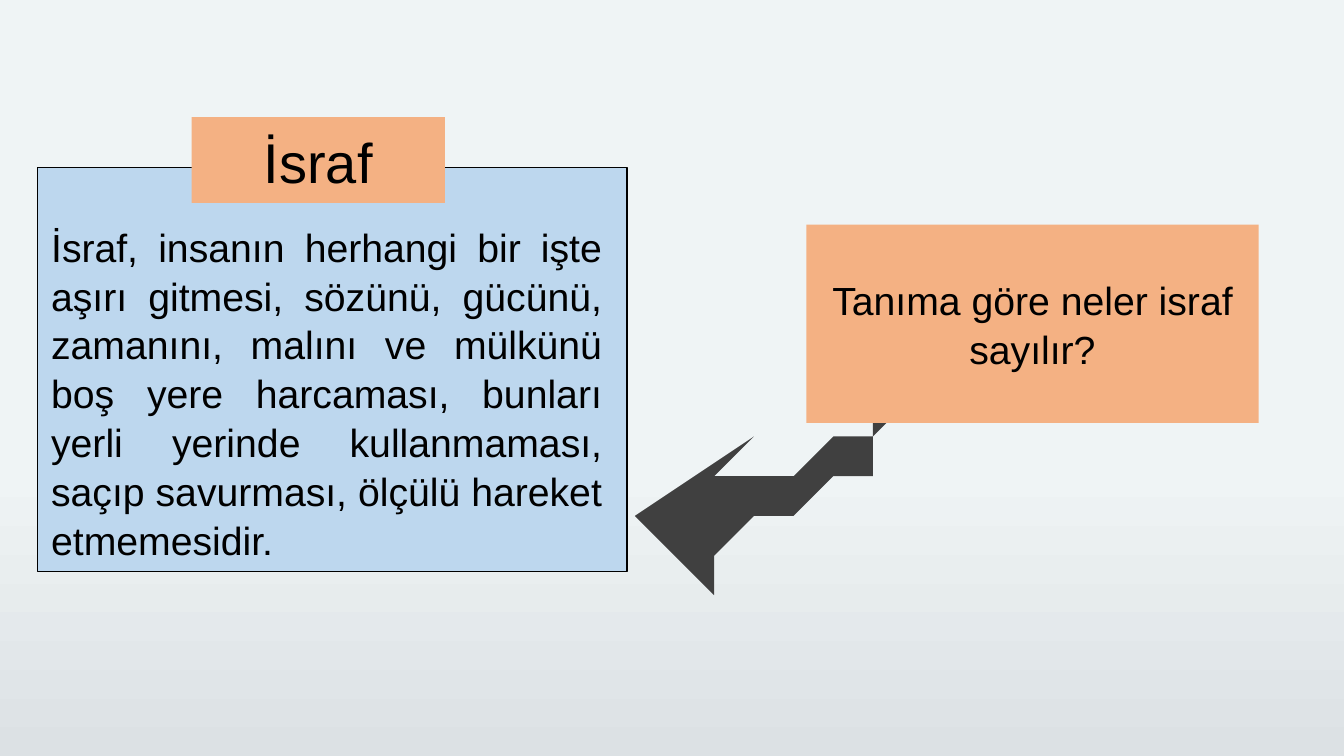
"""Build the slide that defines İsraf and asks a question about it."""
from pptx import Presentation
from pptx.dml.color import RGBColor as RGB
from pptx.enum.shapes import MSO_SHAPE as Shape
from pptx.enum.text import MSO_ANCHOR as Anchor, MSO_AUTO_SIZE as Auto, PP_ALIGN as Align
from pptx.util import Cm, Pt

BLACK = RGB(0, 0, 0)
PEACH = RGB(0xF4, 0xB1, 0x83)
BLUE = RGB(0xBD, 0xD7, 0xEE)
DARK = RGB(0x40, 0x40, 0x40)
PALE = RGB(0xEF, 0xF4, 0xF5)
GREY = RGB(0xDC, 0xE1, 0xE4)

TITLE = "İsraf"
ASK = "Tanıma göre neler israf sayılır?"
BODY = (
    "İsraf, insanın herhangi bir işte aşırı gitmesi, sözünü, gücünü, "
    "zamanını, malını ve mülkünü boş yere harcaması, bunları yerli yerinde "
    "kullanmaması, saçıp savurması, ölçülü hareket etmemesidir."
)


def paint(slide):
    """Give the slide a gradient that darkens towards the bottom."""
    fill = slide.background.fill
    fill.gradient()
    fill.gradient_angle = 270
    for stop, color, place in zip(fill.gradient_stops, (PALE, GREY), (0.62, 1)):
        stop.color.rgb = color
        stop.position = place


def write(shape, text, size, align, anchor=Anchor.MIDDLE, inset=(0, 0)):
    """Set the text of a shape in black Arial."""
    frame = shape.text_frame
    frame.text = text
    frame.word_wrap = True
    frame.auto_size = Auto.NONE
    frame.vertical_anchor = anchor
    frame.margin_left = frame.margin_right = Cm(inset[0])
    frame.margin_top = frame.margin_bottom = Cm(inset[1])
    para = frame.paragraphs[0]
    para.alignment = align
    para.line_spacing = 1.04
    para.font.name = "Arial"
    para.font.size = Pt(size)
    para.font.color.rgb = BLACK


def style(shape, color):
    """Fill a shape with one colour, without line or shadow."""
    shape.shadow.inherit = False
    shape.fill.solid()
    shape.fill.fore_color.rgb = color
    shape.line.fill.background()


def add_box(slide, area, color):
    """Add a plain filled rectangle."""
    box = slide.shapes.add_shape(Shape.RECTANGLE, *map(Cm, area))
    style(box, color)
    return box


def bend(start, pull, end, steps=24):
    """Return points on a cubic curve whose first handle is its start."""
    def mix(t, a, b, c):
        return a * ((1 - t) ** 3 + 3 * t * (1 - t) ** 2) + b * 3 * t * t * (1 - t) + c * t ** 3
    return [
        tuple(mix(i / steps, *axis) for axis in zip(start, pull, end))
        for i in range(1, steps + 1)
    ]


def add_arrow(slide):
    """Add the curved arrow from the question to the definition."""
    tail, neck, heel = (22.83, 9.83), (18.36, 11.96), (17.96, 13.59)
    head = [(18.64, 10.85), (16.26, 12.85), (17.7, 14.61), heel]
    points = bend(tail, (21.77, 11.73), neck) + head + bend(heel, (21.29, 13.08), tail)
    path = slide.shapes.build_freeform(*tail, scale=Cm(1))
    path.add_line_segments(points, close=True)
    style(path.convert_to_shape(), DARK)


def add_title(slide):
    """Format the title as a label and bring it to the front."""
    title = slide.shapes.title
    title.left, title.top, title.width, title.height = map(Cm, (4.83, 2.95, 6.38, 2.16))
    title.fill.solid()
    title.fill.fore_color.rgb = PEACH
    write(title, TITLE, 40, Align.CENTER)
    title.element.getparent().append(title.element)


def main():
    """Build and save the slide."""
    deck = Presentation()
    deck.slide_width, deck.slide_height = Cm(33.87), Cm(19.05)
    slide = deck.slides.add_slide(deck.slide_layouts.get_by_name("Title Only"))
    paint(slide)
    add_arrow(slide)
    write(add_box(slide, (20.32, 5.66, 11.4, 5), PEACH), ASK, 28, Align.CENTER)
    panel = add_box(slide, (0.94, 4.22, 14.86, 10.19), BLUE)
    panel.line.color.rgb = BLACK
    panel.line.width = Pt(1)
    note = slide.shapes.add_textbox(*map(Cm, (1.04, 5.44, 14.38, 8.89)))
    write(note, BODY, 28, Align.JUSTIFY, Anchor.TOP, (0.25, 0.13))
    add_title(slide)
    deck.save("out.pptx")


if __name__ == "__main__":
    main()
